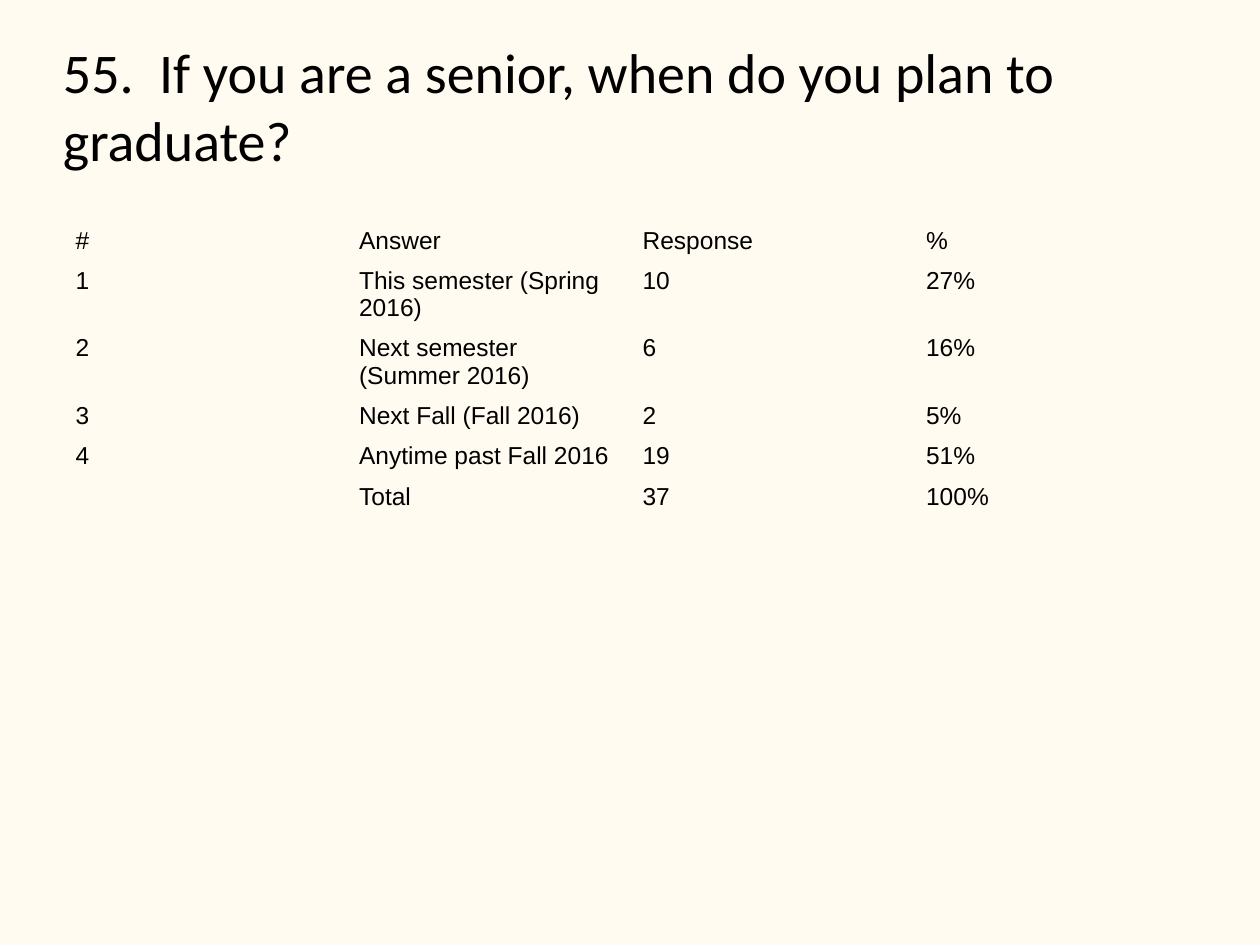
from typing import NamedTuple

from pptx import Presentation
from pptx.dml.color import RGBColor
from pptx.enum.shapes import MSO_SHAPE
from pptx.enum.text import MSO_ANCHOR, PP_ALIGN
from pptx.util import Inches, Pt

COLORS = {"background": "FFFBF0", "text": "000000"}
NO_STYLE_NO_GRID = "{2D5ABB26-0587-4C30-8999-92F81FD0307C}"
LEFT, WIDTH = 0.5, 9
ROW_HEIGHT = 0.19
FRAME_SIZE = 3.28


class Answer(NamedTuple):
    """One row of the survey table."""

    number: str
    label: str
    response: str
    percent: str


ANSWERS = [
    Answer("#", "Answer", "Response", "%"),
    Answer("1", "This semester (Spring 2016)", "10", "27%"),
    Answer("2", "Next semester (Summer 2016)", "6", "16%"),
    Answer("3", "Next Fall (Fall 2016)", "2", "5%"),
    Answer("4", "Anytime past Fall 2016", "19", "51%"),
    Answer("", "Total", "37", "100%"),
]


def write(tf, text: str, *, size: int, font: str, color: str = "text") -> None:
    """Write formatted text, or only set the line size when there is none."""
    p = tf.paragraphs[0]
    p.alignment = PP_ALIGN.LEFT
    if not text:
        p._p.get_or_add_endParaRPr().set("sz", str(size * 100))
        return
    r = p.add_run()
    r.text = text
    r.font.size = Pt(size)
    r.font.name = font
    r.font.color.rgb = RGBColor.from_string(COLORS[color])


def add_title(s, text: str) -> None:
    """Add the question at the top of the slide."""
    sp = s.shapes.add_shape(
        MSO_SHAPE.ROUNDED_RECTANGLE,
        Inches(LEFT), Inches(0.3), Inches(WIDTH), Inches(1.25),
    )
    sp.adjustments[0] = 0
    sp.shadow.inherit = False
    sp.fill.background()
    sp.line.fill.background()
    tf = sp.text_frame
    tf.word_wrap = True
    tf.vertical_anchor = MSO_ANCHOR.TOP
    tf.margin_left = tf.margin_right = tf.margin_top = tf.margin_bottom = 0
    write(tf, text, size=32, font="Calibri")


def add_answers(s, answers: list[Answer]) -> None:
    """Add the plain table of answers with equal columns."""
    frame = s.shapes.add_table(
        len(answers), len(Answer._fields), Inches(LEFT), Inches(1.75),
        Inches(WIDTH), Inches(ROW_HEIGHT * len(answers)),
    )
    frame.width = frame.height = Inches(FRAME_SIZE)
    table = frame.table
    table.first_row = table.horz_banding = False
    tbl_pr = frame._element.graphic.graphicData.tbl.tblPr
    tbl_pr[0].text = NO_STYLE_NO_GRID
    for i, answer in enumerate(answers):
        for j, text in enumerate(answer):
            cell = table.cell(i, j)
            cell.fill.background()
            write(cell.text_frame, text, size=14, font="Arial")


def main() -> None:
    """Build and save the slide."""
    prs = Presentation()
    prs.slide_width, prs.slide_height = Inches(10), Inches(7.5)
    s = prs.slides.add_slide(prs.slide_layouts[6])
    fill = s.background.fill
    fill.solid()
    fill.fore_color.rgb = RGBColor.from_string(COLORS["background"])
    add_title(s, "55.  If you are a senior, when do you plan to graduate?")
    add_answers(s, ANSWERS)
    prs.save("out.pptx")


if __name__ == "__main__":
    main()
